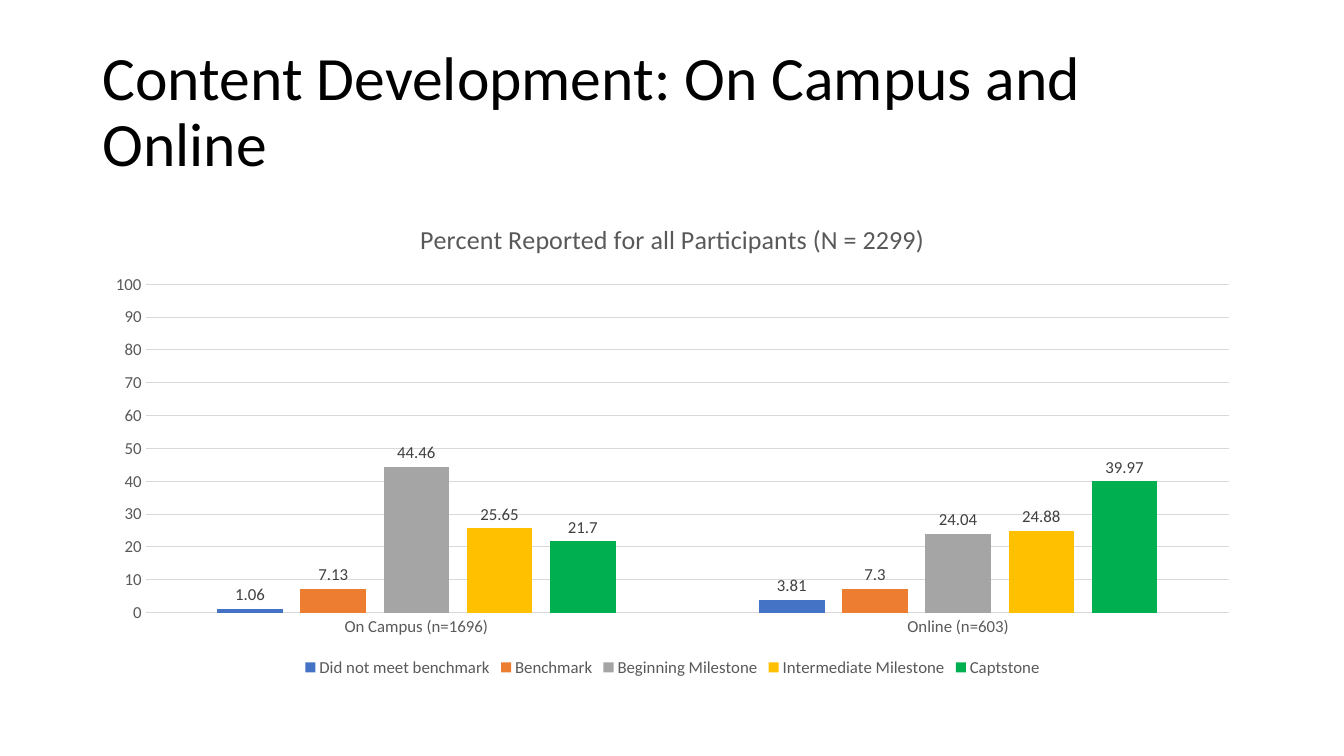
import pptx
import pptx.util
import pptx.chart.data
import pptx.dml.color
import pptx.enum.chart
import pptx.enum.text

FONT = "Calibri"
GREY, GRID = "595959", "D9D9D9"
W, H = 13.33, 7.5
LEFT, WIDTH = 0.92, 11.5


def rgb(value):
    return pptx.dml.color.RGBColor.from_string(value)


def write(tf, text, size, color, spacing=1.0):
    p = tf.paragraphs[0]
    p.line_spacing = spacing
    r = p.add_run()
    r.text = text
    r.font.name, r.font.size, r.font.bold = FONT, pptx.util.Pt(size), False
    r.font.color.rgb = rgb(color)


prs = pptx.Presentation()
prs.slide_width, prs.slide_height = pptx.util.Inches(W), pptx.util.Inches(H)
s = prs.slides.add_slide(prs.slide_layouts[6])

# Slide title
box = [pptx.util.Inches(v) for v in (LEFT, 0.4, WIDTH, 1.45)]
tf = s.shapes.add_textbox(*box).text_frame
tf.word_wrap = True
tf.vertical_anchor = pptx.enum.text.MSO_ANCHOR.MIDDLE
write(tf, "Content Development: On Campus and Online", size=44, color="000000", spacing=0.9)

# Chart data: name, colour, on campus, online
levels = [
    ("Did not meet benchmark", "4472C4", 1.06, 3.81),
    ("Benchmark", "ED7D31", 7.13, 7.3),
    ("Beginning Milestone", "A5A5A5", 44.46, 24.04),
    ("Intermediate Milestone", "FFC000", 25.65, 24.88),
    ("Captstone", "00B050", 21.7, 39.97),
]
data = pptx.chart.data.CategoryChartData()
data.categories = ["On Campus (n=1696)", "Online (n=603)"]
for name, color, *values in levels:
    data.add_series(name, values)

# Clustered columns
box = [pptx.util.Inches(v) for v in (LEFT, 2, WIDTH, 4.76)]
chart = s.shapes.add_chart(
    pptx.enum.chart.XL_CHART_TYPE.COLUMN_CLUSTERED, *box, data).chart
chart.font.name, chart.font.size = FONT, pptx.util.Pt(12)
chart.font.color.rgb = rgb(GREY)
chart.has_title = True
write(chart.chart_title.text_frame, "Percent Reported for all Participants (N = 2299)",
      size=18.6, color=GREY)
chart.chart_title.include_in_layout = False

plot = chart.plots[0]
plot.gap_width, plot.overlap, plot.vary_by_categories = 219, -27, False
for series, (name, color, *values) in zip(plot.series, levels):
    series.format.fill.solid()
    series.format.fill.fore_color.rgb = rgb(color)
    labels = series.data_labels
    labels.show_value = True
    labels.position = pptx.enum.chart.XL_LABEL_POSITION.OUTSIDE_END
    labels.font.name, labels.font.size = FONT, pptx.util.Pt(12)
    labels.font.color.rgb = rgb("404040")

# Axes and gridlines
cat, val = chart.category_axis, chart.value_axis
for axis in (cat, val):
    axis.major_tick_mark = axis.minor_tick_mark = pptx.enum.chart.XL_TICK_MARK.NONE
val.minimum_scale, val.maximum_scale, val.major_unit = 0, 100, 10
val.has_major_gridlines = True
val.format.line.fill.background()
for line in (cat.format.line, val.major_gridlines.format.line):
    line.color.rgb = rgb(GRID)
    line.width = pptx.util.Pt(0.75)

# Legend
chart.has_legend = True
chart.legend.position = pptx.enum.chart.XL_LEGEND_POSITION.BOTTOM
chart.legend.include_in_layout = False

prs.save("out.pptx")
